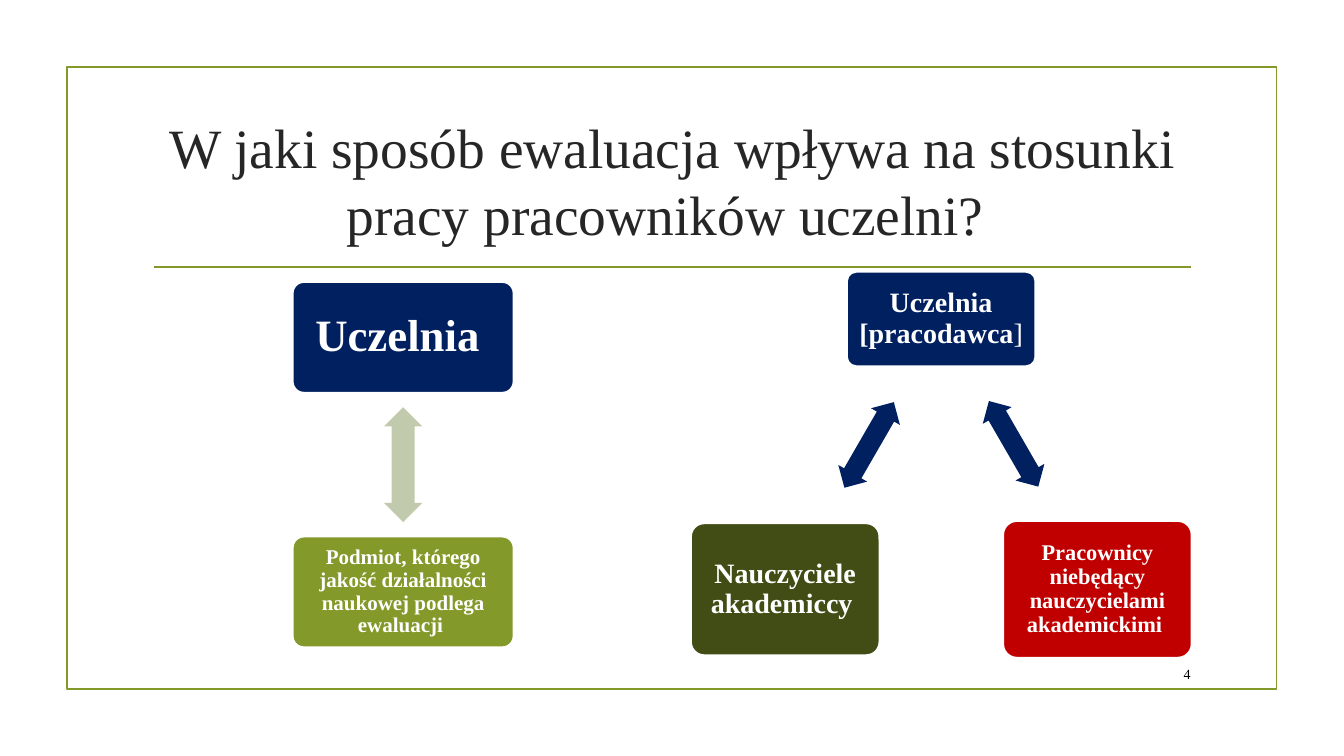
from dataclasses import dataclass

from pptx import Presentation
from pptx.dml.color import RGBColor
from pptx.enum.shapes import MSO_CONNECTOR, MSO_SHAPE
from pptx.enum.text import MSO_ANCHOR, MSO_AUTO_SIZE, PP_ALIGN
from pptx.oxml.ns import qn
from pptx.shapes.autoshape import Shape
from pptx.slide import Slide
from pptx.text.text import TextFrame
from pptx.util import Pt

FONT = "Times New Roman"
WHITE = RGBColor(0xFF, 0xFF, 0xFF)
BLACK = RGBColor(0, 0, 0)
CHARCOAL = RGBColor(0x26, 0x26, 0x26)
OLIVE = RGBColor(0x83, 0x99, 0x2A)
DARK_OLIVE = RGBColor(0x41, 0x4D, 0x15)
SAGE = RGBColor(0xC1, 0xCA, 0xAD)
NAVY = RGBColor(0x00, 0x20, 0x60)
RED = RGBColor(0xC0, 0x00, 0x00)
LINE_WIDTH = 1.25


@dataclass(frozen=True)
class Box:
    left: float
    top: float
    width: float
    height: float


@dataclass(frozen=True)
class Card:
    box: Box
    fill: RGBColor
    text: str
    size: float
    inset: float
    plain_ending: str = ""


@dataclass(frozen=True)
class Arrow:
    center_x: float
    center_y: float
    length: float
    thickness: float
    rotation: float
    fill: RGBColor


CARDS = [
    Card(Box(209.1, 201.5, 157.7, 79), NAVY, "Uczelnia ", 32, 9.6),
    Card(Box(209.1, 383.3, 157.7, 79), OLIVE,
         "Podmiot, którego jakość działalności naukowej podlega ewaluacji ", 15, 4.5),
    Card(Box(605, 194.2, 134.6, 67.4), NAVY, "Uczelnia [pracodawca", 20, 6, "]"),
    Card(Box(716.6, 372.2, 134.6, 97.6), RED,
         "Pracownicy niebędący nauczycielami akademickimi ", 16, 4.8),
    Card(Box(493.6, 373.8, 134.6, 94.2), DARK_OLIVE, "Nauczyciele akademiccy ", 20, 6),
]
ARROWS = [
    Arrow(288, 331.9, 82, 27.4, 90, SAGE),
    Arrow(724, 317, 70.6, 23.8, 60, NAVY),
    Arrow(620.8, 317.8, 70.6, 23.8, 300, NAVY),
]


def write_text(frame: TextFrame, text: str, *, size: float, color: RGBColor,
               bold: bool = False, align: PP_ALIGN = PP_ALIGN.CENTER,
               line_spacing: float = 1.0, inset: float | None = None,
               plain_ending: str = "") -> None:
    frame.word_wrap = True
    frame.auto_size = MSO_AUTO_SIZE.NONE
    frame.vertical_anchor = MSO_ANCHOR.MIDDLE
    if inset is not None:
        frame.margin_left = frame.margin_right = Pt(inset)
        frame.margin_top = frame.margin_bottom = Pt(inset)
    paragraph = frame.paragraphs[0]
    paragraph.alignment = align
    paragraph.line_spacing = line_spacing
    for content, is_bold in ((text, bold), (plain_ending, False)):
        if content:
            run = paragraph.add_run()
            run.text = content
            run.font.name = FONT
            run.font.size = Pt(size)
            run.font.bold = is_bold
            run.font.color.rgb = color


def add_filled_shape(slide: Slide, kind: MSO_SHAPE, box: Box, fill: RGBColor | None,
                     line: RGBColor | None) -> Shape:
    shape = slide.shapes.add_shape(kind, Pt(box.left), Pt(box.top), Pt(box.width), Pt(box.height))
    shape.shadow.inherit = False
    if fill is None:
        shape.fill.background()
    else:
        shape.fill.solid()
        shape.fill.fore_color.rgb = fill
    if line is None:
        shape.line.fill.background()
    else:
        shape.line.color.rgb = line
        shape.line.width = Pt(LINE_WIDTH)
    return shape


def add_divider(slide: Slide, left: float, right: float, top: float) -> None:
    divider = slide.shapes.add_connector(
        MSO_CONNECTOR.STRAIGHT, Pt(left), Pt(top), Pt(right), Pt(top))
    divider.line.color.rgb = OLIVE
    divider.line.width = Pt(LINE_WIDTH)
    properties = divider._element.spPr
    properties.append(properties.makeelement(qn("a:effectLst"), {}))


def add_title(slide: Slide, box: Box, text: str) -> None:
    title = slide.shapes.title
    title.left, title.top = Pt(box.left), Pt(box.top)
    title.width, title.height = Pt(box.width), Pt(box.height)
    write_text(title.text_frame, text, size=39.6, color=CHARCOAL)


def add_card(slide: Slide, card: Card) -> None:
    shape = add_filled_shape(slide, MSO_SHAPE.ROUNDED_RECTANGLE, card.box, card.fill, WHITE)
    shape.adjustments[0] = 0.1
    write_text(shape.text_frame, card.text, size=card.size, color=WHITE, bold=True,
               line_spacing=0.9, inset=card.inset, plain_ending=card.plain_ending)


def add_arrow(slide: Slide, arrow: Arrow) -> None:
    box = Box(arrow.center_x - arrow.length / 2, arrow.center_y - arrow.thickness / 2,
              arrow.length, arrow.thickness)
    shape = add_filled_shape(slide, MSO_SHAPE.LEFT_RIGHT_ARROW, box, arrow.fill, None)
    shape.adjustments[0] = 0.6
    shape.adjustments[1] = 0.5
    shape.rotation = arrow.rotation


def add_page_number(slide: Slide, box: Box, number: str) -> None:
    text_box = slide.shapes.add_textbox(
        Pt(box.left), Pt(box.top), Pt(box.width), Pt(box.height))
    write_text(text_box.text_frame, number, size=10, color=BLACK, align=PP_ALIGN.RIGHT)


def main() -> None:
    presentation = Presentation()
    presentation.slide_width, presentation.slide_height = Pt(960), Pt(540)
    slide = presentation.slides.add_slide(presentation.slide_layouts[5])
    add_filled_shape(slide, MSO_SHAPE.RECTANGLE, Box(47.8, 48, 864, 444), None, OLIVE)
    add_divider(slide, 110, 850.5, 190.8)
    add_title(slide, Box(102.2, 77, 756, 103),
              "W jaki sposób ewaluacja wpływa na stosunki pracy pracowników uczelni? ")
    for card in CARDS:
        add_card(slide, card)
    for arrow in ARROWS:
        add_arrow(slide, arrow)
    add_page_number(slide, Box(815, 470.2, 42.5, 22.3), "4")
    presentation.save("out.pptx")


if __name__ == "__main__":
    main()
